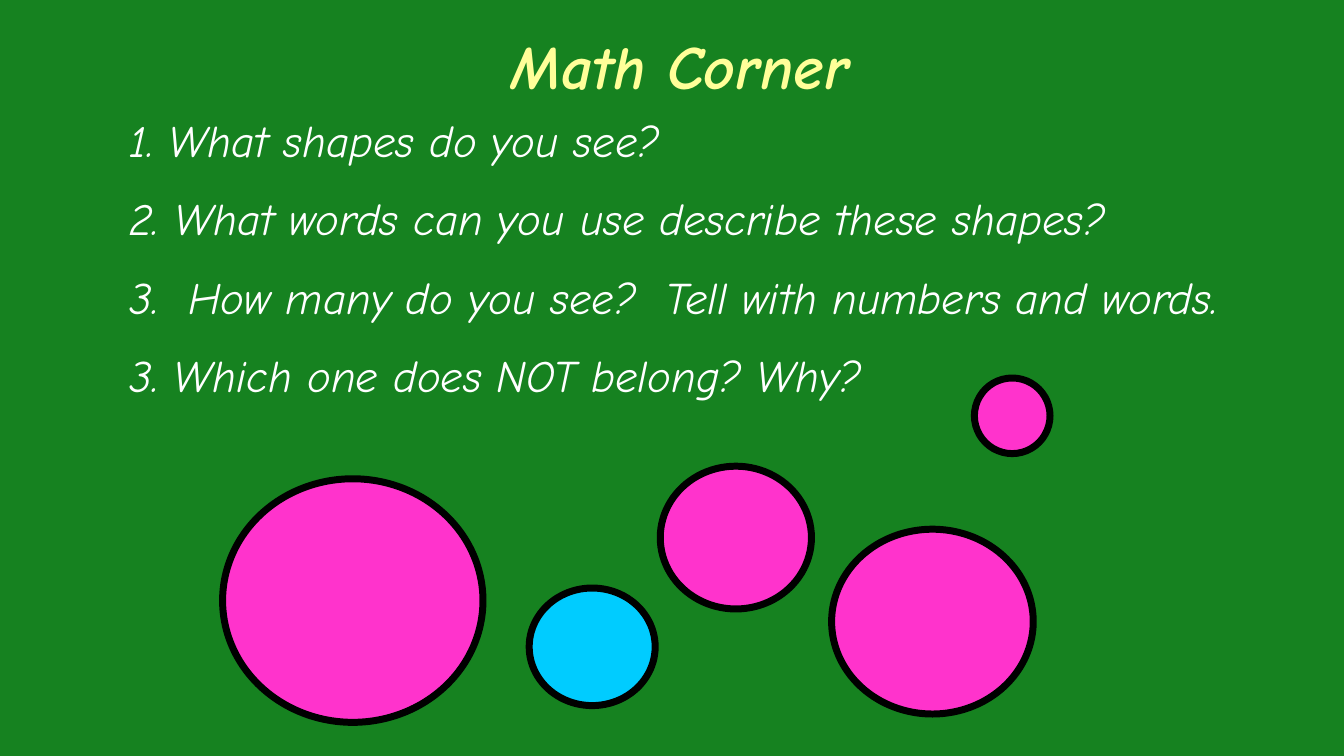
import pptx
import pptx.dml.color
import pptx.enum.shapes
import pptx.enum.text
import pptx.util
from lxml import etree

COLOURS = {
    "board": "168220",
    "title": "FFFF99",
    "text": "FFFFFF",
    "pink": "FF33CC",
    "blue": "00CCFF",
    "outline": "000000",
}
COLUMNS, ROWS = 160, 90
WIDTH, HEIGHT = pptx.util.Inches(13.33), pptx.util.Inches(7.5)
FONT = "Comic Neue"
TITLE_FORMAT = {"name": FONT, "size": pptx.util.Pt(44), "bold": True, "italic": True}
QUESTION_FORMAT = {"name": FONT, "size": pptx.util.Pt(32), "bold": False, "italic": True}
QUESTIONS = [
    "1. What shapes do you see?",
    "2. What words can you use describe these shapes?",
    "3.  How many do you see?  Tell with numbers and words.",
    "3. Which one does NOT belong? Why?",
]
CIRCLES = [
    ((26.5, 57, 31, 29), "pink"),
    ((78.6, 55.5, 18, 17), "pink"),
    ((63, 70, 15, 14), "blue"),
    ((116, 45, 9, 9), "pink"),
    ((99, 63, 24, 22), "pink"),
]


def colour(name):
    """Return the named colour."""
    return pptx.dml.color.RGBColor.from_string(COLOURS[name])


def grid_box(column, row, columns, rows):
    """Turn grid cells into left, top, width and height."""
    return (
        int(WIDTH * column / COLUMNS),
        int(HEIGHT * row / ROWS),
        int(WIDTH * columns / COLUMNS),
        int(HEIGHT * rows / ROWS),
    )


def set_attributes(target, values):
    """Set every attribute in the dict on the target."""
    for name, value in values.items():
        setattr(target, name, value)


def place(shape, cells, anchor):
    """Move a placeholder to its cells and set its text frame."""
    names = ("left", "top", "width", "height")
    set_attributes(shape, dict(zip(names, grid_box(*cells))))
    set_attributes(shape.text_frame, {
        "word_wrap": True,
        "auto_size": pptx.enum.text.MSO_AUTO_SIZE.NONE,
        "vertical_anchor": anchor,
    })


def format_paragraph(paragraph, font_format, colour_name):
    """Apply the font and colour to a paragraph."""
    set_attributes(paragraph.font, font_format)
    paragraph.font.color.rgb = colour(colour_name)


def add_title(slide, text):
    """Fill and format the title placeholder."""
    title = slide.shapes.title
    place(title, (27, 0.25, 108, 15), pptx.enum.text.MSO_ANCHOR.MIDDLE)
    title.text_frame.text = text
    paragraph = title.text_frame.paragraphs[0]
    paragraph.alignment = pptx.enum.text.PP_ALIGN.CENTER
    format_paragraph(paragraph, TITLE_FORMAT, "title")


def add_questions(slide, questions):
    """Fill the body placeholder with unbulleted questions."""
    body = slide.placeholders[1]
    place(body, (14.2, 12.8, 138, 43.2), pptx.enum.text.MSO_ANCHOR.TOP)
    body.text_frame.text = "\n".join(questions)
    for index, paragraph in enumerate(body.text_frame.paragraphs):
        properties = paragraph._p.get_or_add_pPr()
        properties.set("marL", "0")
        properties.set("indent", "0")
        etree.SubElement(properties, pptx.oxml.ns.qn("a:buNone"))
        paragraph.space_before = pptx.util.Pt(17.6 if index else 0)
        format_paragraph(paragraph, QUESTION_FORMAT, "text")


def add_circle(slide, cells, fill):
    """Draw one outlined circle."""
    circle = slide.shapes.add_shape(
        pptx.enum.shapes.MSO_SHAPE.OVAL, *grid_box(*cells))
    circle.shadow.inherit = False
    circle.fill.solid()
    circle.fill.fore_color.rgb = colour(fill)
    circle.line.color.rgb = colour("outline")
    circle.line.width = pptx.util.Pt(5)


def main():
    """Build and save the Math Corner slide."""
    presentation = pptx.Presentation()
    set_attributes(presentation, {"slide_width": WIDTH, "slide_height": HEIGHT})
    slide = presentation.slides.add_slide(presentation.slide_layouts[1])
    slide.background.fill.solid()
    slide.background.fill.fore_color.rgb = colour("board")
    add_title(slide, "Math Corner")
    for cells, fill in CIRCLES:
        add_circle(slide, cells, fill)
    add_questions(slide, QUESTIONS)
    presentation.save("out.pptx")


if __name__ == "__main__":
    main()
